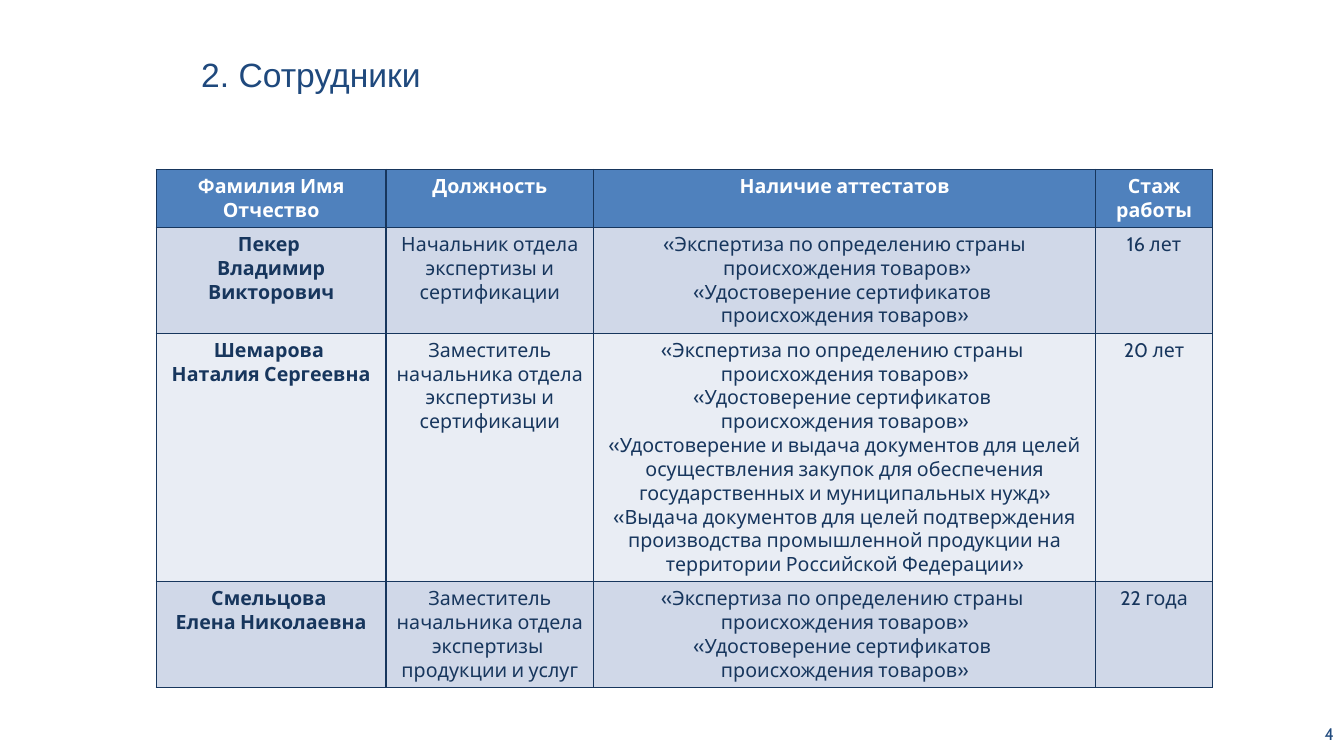
"""Build the staff slide: a title, a table of employees and a page number."""
from lxml.etree import SubElement
from pptx import Presentation
from pptx.dml.color import RGBColor
from pptx.enum.text import MSO_ANCHOR as Anchor, MSO_AUTO_SIZE as AutoSize, PP_ALIGN as Align
from pptx.oxml.ns import qn
from pptx.util import Pt

TITLE = "2. Сотрудники"
PAGE_NUMBER = "4"
HEADERS = ["Фамилия Имя Отчество", "Должность", "Наличие аттестатов", "Стаж работы"]
CERTIFICATES = [
    "«Экспертиза по определению страны ",
    "происхождения товаров»",
    "«Удостоверение сертификатов ",
    "происхождения товаров»",
]
EXTRA_CERTIFICATES = [
    "«Удостоверение и выдача документов для целей осуществления закупок "
    "для обеспечения государственных и муниципальных нужд»",
    "«Выдача документов для целей подтверждения производства "
    "промышленной продукции на территории Российской Федерации»",
]
EMPLOYEES = [
    (["Пекер ", "Владимир Викторович"],
     ["Начальник отдела экспертизы и сертификации"],
     ["«Экспертиза по определению страны", " происхождения товаров»", *CERTIFICATES[2:]],
     ["16 лет"]),
    (["Шемарова ", "Наталия Сергеевна"],
     ["Заместитель начальника отдела экспертизы и сертификации"],
     CERTIFICATES + EXTRA_CERTIFICATES,
     ["20 лет"]),
    (["Смельцова ", "Елена Николаевна"],
     ["Заместитель начальника отдела экспертизы ", "продукции и услуг"],
     CERTIFICATES,
     ["22 года"]),
]
COLORS = {
    "title": "1F497D", "text": "17365D", "border": "17365D", "white": "FFFFFF",
    "header": "4F81BD", "odd": "D0D8E8", "even": "E9EDF4",
}
SLIDE_SIZE = (960, 540)
TITLE_BOX = (111.6, 38.2, 221, 33.1)
NUMBER_BOX = (834.5, 508.3, 125.5, 31.7)
TABLE_LEFT, TABLE_TOP = 111.6, 121
COLUMN_WIDTHS = [164.2, 148.3, 358.6, 83.5]
ROW_HEIGHTS = [41.4, 75.6, 177.5, 75.6]
BORDER_WIDTH = 1


def write(frame, lines, size=14, font="Cabin", color="text", bold=False,
          align=Align.CENTER, spacing=None):
    """Fill a text frame with one formatted paragraph per line."""
    for index, line in enumerate(lines):
        para = frame.paragraphs[0] if index == 0 else frame.add_paragraph()
        para.alignment = align
        para.line_spacing = spacing
        span = para.add_run()
        span.text = line
        span.font.size = Pt(size)
        span.font.name = font
        span.font.bold = bold
        span.font.color.rgb = RGBColor.from_string(COLORS[color])


def add_borders(cell):
    """Draw a line on all four sides of a table cell."""
    properties = cell._tc.get_or_add_tcPr()
    for position, side in enumerate(("a:lnL", "a:lnR", "a:lnT", "a:lnB")):
        line = SubElement(properties, qn(side), w=str(Pt(BORDER_WIDTH)))
        fill = SubElement(line, qn("a:solidFill"))
        SubElement(fill, qn("a:srgbClr"), val=COLORS["border"])
        properties.insert(position, line)


def add_title(page):
    """Place and format the title placeholder."""
    title = page.shapes.title
    title.left, title.top, title.width, title.height = map(Pt, TITLE_BOX)
    frame = title.text_frame
    frame.word_wrap = True
    frame.auto_size = AutoSize.SHAPE_TO_FIT_TEXT
    frame.vertical_anchor = Anchor.MIDDLE
    write(frame, [TITLE], size=24, font="Arial", color="title", spacing=0.89)


def add_staff_table(page):
    """Add the table of employees."""
    rows = [[[header] for header in HEADERS], *EMPLOYEES]
    table = page.shapes.add_table(
        len(rows), len(HEADERS), Pt(TABLE_LEFT), Pt(TABLE_TOP),
        Pt(sum(COLUMN_WIDTHS)), Pt(sum(ROW_HEIGHTS))).table
    for column, width in zip(table.columns, COLUMN_WIDTHS):
        column.width = Pt(width)
    for row_index, (row, height) in enumerate(zip(rows, ROW_HEIGHTS)):
        table.rows[row_index].height = Pt(height)
        is_header = row_index == 0
        shade = "header" if is_header else "odd" if row_index % 2 else "even"
        for column_index, lines in enumerate(row):
            cell = table.cell(row_index, column_index)
            cell.fill.solid()
            cell.fill.fore_color.rgb = RGBColor.from_string(COLORS[shade])
            add_borders(cell)
            write(cell.text_frame, lines, color="white" if is_header else "text",
                  bold=is_header or column_index == 0)


def add_page_number(page):
    """Add the page number in the lower right corner."""
    frame = page.shapes.add_textbox(*map(Pt, NUMBER_BOX)).text_frame
    frame.word_wrap = True
    frame.vertical_anchor = Anchor.MIDDLE
    write(frame, [PAGE_NUMBER], size=12, color="title", align=Align.RIGHT)


def main():
    """Build and save the deck."""
    deck = Presentation()
    deck.slide_width, deck.slide_height = map(Pt, SLIDE_SIZE)
    page = deck.slides.add_slide(deck.slide_layouts[5])
    add_title(page)
    add_staff_table(page)
    add_page_number(page)
    deck.save("out.pptx")


if __name__ == "__main__":
    main()
